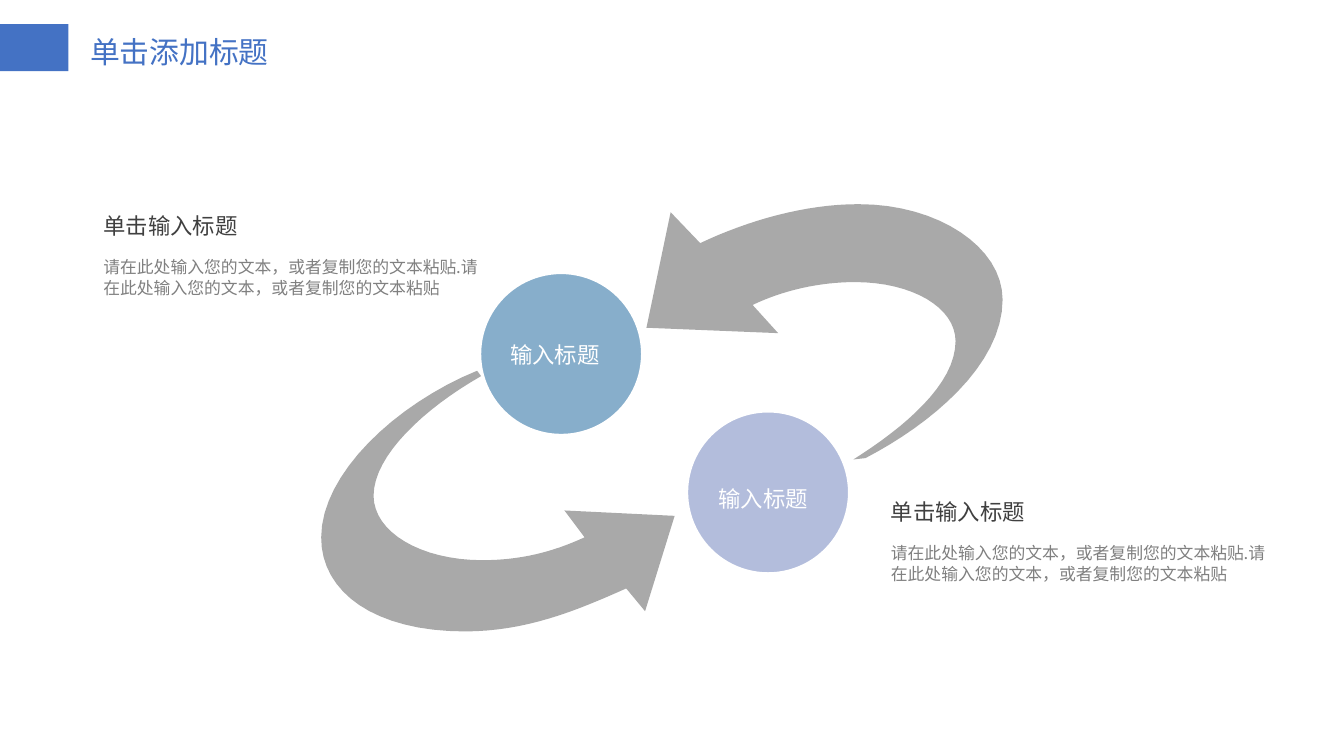
import dataclasses

import pptx
import pptx.dml.color
import pptx.enum.shapes
import pptx.enum.text
import pptx.oxml.ns
import pptx.oxml.xmlchemy
import pptx.util

Inches = pptx.util.Inches
ALIGN = pptx.enum.text.PP_ALIGN
ANCHOR = pptx.enum.text.MSO_ANCHOR
SHAPE = pptx.enum.shapes.MSO_SHAPE


@dataclasses.dataclass(frozen=True)
class Theme:
    """Colours, font and type sizes of the deck."""
    font: str = "Noto Sans CJK SC"
    accent: str = "4472C4"
    paper: str = "FFFFFF"
    arrow: str = "A9A9A9"
    upper: str = "87AECB"
    lower: str = "B3BDDC"
    heading: str = "404040"
    body: str = "808080"
    title_size: float = 16
    heading_size: float = 12
    body_size: float = 9
    body_leading: float = 11
    outline: float = 1.5


@dataclasses.dataclass(frozen=True)
class Box:
    """A rectangle measured in inches."""
    left: float
    top: float
    width: float
    height: float

    def inside(self, left, top, width, height):
        """Return a box placed relative to this one."""
        return Box(self.left + left, self.top + top, width, height)

    def lengths(self):
        """Return left, top, width and height as lengths."""
        return [Inches(value) for value in dataclasses.astuple(self)]


THEME = Theme()

RIGHT_ARROW = (
    (1.63, 1.89),
    [
        [(2.11, 1.64), (2.65, 1.2), (2.65, 0.71)],
        [(2.65, 0.32), (2.17, 0), (1.58, 0)],
        [(1.18, 0), (0.76, 0.12), (0.4, 0.29)],
        [(0.18, 0.06)], [(0, 0.92)], [(0.98, 0.96)], [(0.79, 0.75)],
        [(1.02, 0.64), (1.29, 0.58), (1.55, 0.58)],
        [(1.98, 0.58), (2.3, 0.77), (2.3, 1.02)],
        [(2.3, 1.34), (1.92, 1.66), (1.54, 1.9)],
    ],
)
LEFT_ARROW = (
    (1.16, 0),
    [
        [(0.55, 0.25), (0, 0.77), (0, 1.24)],
        [(0, 1.65), (0.4, 1.94), (1.07, 1.94)],
        [(1.52, 1.94), (1.89, 1.79), (2.27, 1.62)],
        [(2.41, 1.79)], [(2.63, 1.08)], [(1.81, 1.04)], [(1.96, 1.24)],
        [(1.72, 1.35), (1.48, 1.41), (1.2, 1.41)],
        [(0.74, 1.41), (0.39, 1.2), (0.39, 0.93)],
        [(0.39, 0.63), (0.77, 0.28), (1.19, 0.04)],
    ],
)


def apply(target, **values):
    """Set each named attribute on the target."""
    for name, value in values.items():
        setattr(target, name, value)


def rgb(colour):
    """Turn a hex string into a colour."""
    return pptx.dml.color.RGBColor.from_string(colour)


def write(shape, text, size, colour, frame_format=None, para_format=None):
    """Write one styled paragraph into a shape."""
    frame = shape.text_frame
    apply(frame, **{"word_wrap": True,
                    "auto_size": pptx.enum.text.MSO_AUTO_SIZE.NONE,
                    "vertical_anchor": ANCHOR.MIDDLE, **(frame_format or {})})
    para = frame.paragraphs[0]
    apply(para, **{"alignment": ALIGN.LEFT, **(para_format or {})})
    span = para.add_run()
    span.text = text
    apply(span.font, name=THEME.font, size=pptx.util.Pt(size))
    span.font.color.rgb = rgb(colour)
    east_asian = pptx.oxml.xmlchemy.OxmlElement("a:ea")
    east_asian.set("typeface", THEME.font)
    span.font._element.find(pptx.oxml.ns.qn("a:latin")).addnext(east_asian)


def paint(shape, fill, line=None):
    """Give a shape a flat fill and an optional outline."""
    shape.shadow.inherit = False
    shape.fill.solid()
    shape.fill.fore_color.rgb = rgb(fill)
    if line:
        shape.line.color.rgb = rgb(line)
        shape.line.width = pptx.util.Pt(THEME.outline)
    else:
        shape.line.fill.background()


def add_header(page, box, text):
    """Place the accent bar and the page title."""
    bar = page.shapes.add_shape(SHAPE.RECTANGLE, *box.inside(0, 0, 0.51, 0.35).lengths())
    paint(bar, THEME.accent)
    title = page.shapes.title
    place = box.inside(0.59, 0.03, 1.5, 0.35).lengths()
    apply(title, **dict(zip(("left", "top", "width", "height"), place)))
    insets = {"margin_left": Inches(0.08), "margin_right": Inches(0.08),
              "margin_top": Inches(0.04), "margin_bottom": Inches(0.04),
              "word_wrap": False}
    write(title, text, THEME.title_size, THEME.accent, insets)


def sample_curve(points, steps=16):
    """Return points along a cubic curve, without its start."""
    weights = (1, 3, 3, 1)
    for step in range(1, steps + 1):
        t = step / steps
        blend = [w * (1 - t) ** (3 - i) * t ** i for i, w in enumerate(weights)]
        yield tuple(sum(b * point[axis] for b, point in zip(blend, points))
                    for axis in (0, 1))


def add_arrow(page, box, outline):
    """Draw a curved arrow from its line and curve segments."""
    start, segments = outline
    points = [start]
    for segment in segments:
        points += segment if len(segment) == 1 else sample_curve([points[-1], *segment])
    corners = [(Inches(x), Inches(y)) for x, y in points]
    builder = page.shapes.build_freeform(*corners[0])
    builder.add_line_segments(corners[1:])
    paint(builder.convert_to_shape(Inches(box.left), Inches(box.top)), THEME.arrow)


def add_circle(page, box, text, colour, label_left, label_top):
    """Group a filled circle with its label."""
    group = page.shapes.add_group_shape()
    circle = group.shapes.add_shape(SHAPE.OVAL, *box.lengths())
    paint(circle, colour, THEME.paper)
    label = group.shapes.add_textbox(*box.inside(label_left, label_top, 1.4, 0.32).lengths())
    write(label, text, THEME.heading_size, THEME.paper, para_format={"alignment": ALIGN.CENTER})


def add_caption(page, box, heading, body):
    """Group a heading with the text below it."""
    group = page.shapes.add_group_shape()
    details = group.shapes.add_textbox(*box.inside(0, 0.41, 2.99, 0.95).lengths())
    write(details, body, THEME.body_size, THEME.body,
          {"vertical_anchor": ANCHOR.TOP, "margin_top": 0, "margin_bottom": 0},
          {"line_spacing": pptx.util.Pt(THEME.body_leading)})
    name = group.shapes.add_textbox(*box.inside(0, 0.02, box.width, 0.32).lengths())
    write(name, heading, THEME.heading_size, THEME.heading)


def main():
    """Build the cycle page and save the deck."""
    deck = pptx.Presentation()
    apply(deck, slide_width=Inches(10), slide_height=pptx.util.Emu(5145088))
    page = deck.slides.add_slide(deck.slide_layouts.get_by_name("Title Only"))
    page.background.fill.solid()
    page.background.fill.fore_color.rgb = rgb(THEME.paper)

    add_header(page, Box(0, 0.18, 3, 0.35), "单击添加标题")
    add_arrow(page, Box(4.81, 1.52, 2.65, 1.9), RIGHT_ARROW)
    add_arrow(page, Box(2.39, 2.76, 2.63, 1.94), LEFT_ARROW)
    add_circle(page, Box(5.11, 3.06, 1.21, 1.21), "输入标题", THEME.lower, -0.13, 0.49)
    add_circle(page, Box(3.57, 2.03, 1.21, 1.21), "输入标题", THEME.upper, -0.14, 0.45)
    sentence = "请在此处输入您的文本，或者复制您的文本粘贴"
    for left, top in ((6.53, 3.63), (0.67, 1.5)):
        add_caption(page, Box(left, top, 3.15, 1.36), "单击输入标题", f"{sentence}.{sentence}")
    deck.save("out.pptx")


if __name__ == "__main__":
    main()
